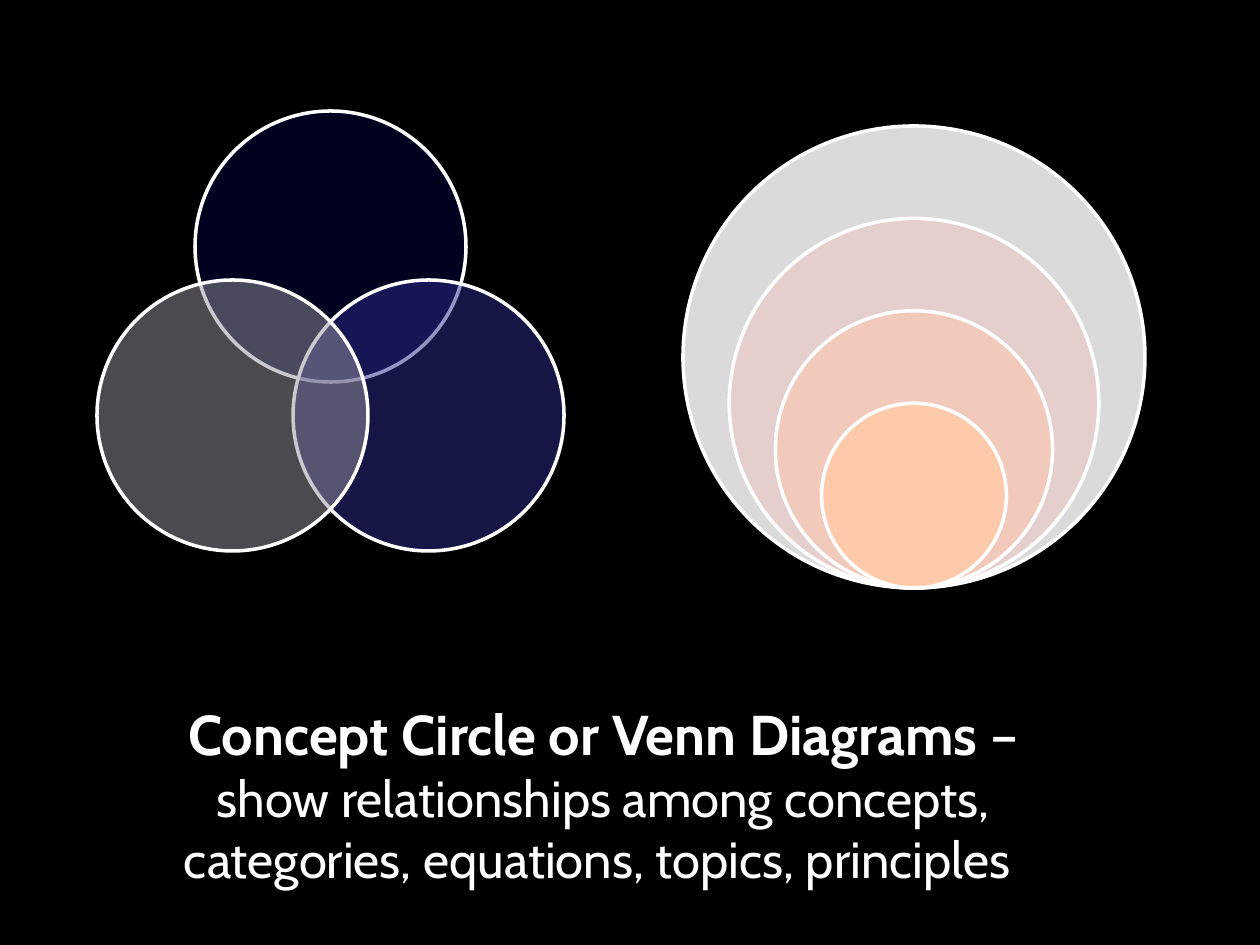
from dataclasses import dataclass

from lxml import etree
from pptx import Presentation
from pptx.dml.color import RGBColor
from pptx.enum.shapes import MSO_SHAPE
from pptx.enum.text import MSO_ANCHOR, MSO_AUTO_SIZE, PP_ALIGN
from pptx.oxml.ns import qn
from pptx.util import Emu, Pt

OVAL = MSO_SHAPE.OVAL
TOP = MSO_ANCHOR.TOP
GROW = MSO_AUTO_SIZE.SHAPE_TO_FIT_TEXT
CENTER = PP_ALIGN.CENTER
TITLE_ONLY = 5


@dataclass(frozen=True)
class Theme:
    font: str = "Cabin"
    back: str = "000000"
    ink: str = "FFFFFF"
    venn: tuple = ("00003E", "2C2C8C", "95959E")
    rings: tuple = ("DADADA", "E5CFCD", "F1CABB", "FFCAAA")
    head: int = 32
    body: int = 29
    line: int = 2
    alpha: int = 50


THEME = Theme()


def px(n):
    return Emu(round(n * 914400 / 126))


def rgb(code):
    return RGBColor.from_string(code)


def circle(group, x, y, size, color, alpha=100):
    """Add an outlined circle; alpha is its opacity in percent."""
    disc = group.shapes.add_shape(OVAL, px(x), px(y), px(size), px(size))
    disc.shadow.inherit = False
    disc.fill.solid()
    disc.fill.fore_color.rgb = rgb(color)
    disc.line.color.rgb = rgb(THEME.ink)
    disc.line.width = Pt(THEME.line)
    if alpha < 100:
        fill = disc._element.spPr.find(qn("a:solidFill"))
        etree.SubElement(fill[0], qn("a:alpha"), val=str(alpha * 1000))


def venn(slide, x, y, w, h):
    """One circle on top, two below, in the corners of the box."""
    group = slide.shapes.add_group_shape()
    size = 271
    right, low = w - size, h - size
    spots = ((right / 2, 0), (right, low), (0, low))
    for (dx, dy), color in zip(spots, THEME.venn):
        circle(group, x + dx, y + dy, size, color, THEME.alpha)


def rings(slide, x, y, size):
    """Circles that shrink by a fifth and share their lowest point."""
    group = slide.shapes.add_group_shape()
    for i, color in enumerate(THEME.rings):
        cut = size * i / 5
        circle(group, x + cut / 2, y + cut, size - cut, color)


def title(slide, x, y, w, h):
    box = slide.shapes.title
    box.left, box.top, box.width, box.height = map(px, (x, y, w, h))
    frame = box.text_frame
    frame.word_wrap = True
    frame.auto_size = GROW
    frame.vertical_anchor = TOP
    para = frame.paragraphs[0]
    para.alignment = CENTER
    for text, size, bold in (
        ("Concept Circle or Venn Diagrams ", THEME.head, True),
        ("– ", THEME.head, False),
        ("show relationships among concepts, categories, equations, "
         "topics, principles ", THEME.body, False),
    ):
        run = para.add_run()
        run.text = text
        run.font.name = THEME.font
        run.font.size = Pt(size)
        run.font.bold = bold
        run.font.color.rgb = rgb(THEME.ink)


def main():
    deck = Presentation()
    deck.slide_width, deck.slide_height = px(1260), px(945)
    slide = deck.slides.add_slide(deck.slide_layouts[TITLE_ONLY])
    slide.background.fill.solid()
    slide.background.fill.fore_color.rgb = rgb(THEME.back)
    venn(slide, 97, 111, 467, 440)
    rings(slide, 683, 126, 462)
    title(slide, 147, 693, 913, 204)
    deck.save("out.pptx")


if __name__ == "__main__":
    main()
